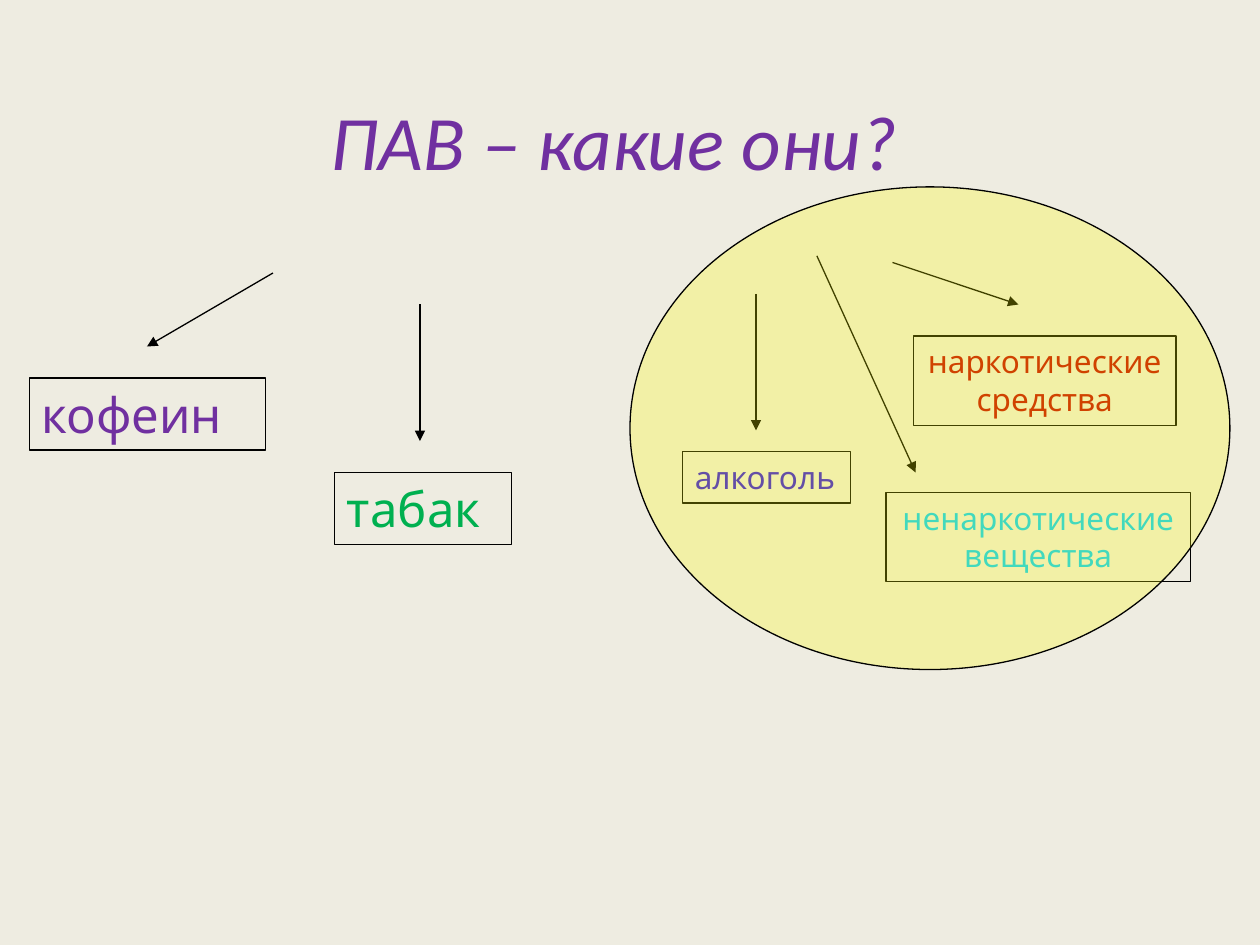
from lxml.etree import SubElement
from pptx import Presentation
from pptx.dml.color import RGBColor
from pptx.enum.shapes import MSO_CONNECTOR, MSO_SHAPE
from pptx.enum.text import MSO_ANCHOR, PP_ALIGN
from pptx.oxml.ns import qn
from pptx.util import Pt

COLORS = {
    "background": "EEECE1", "line": "000000", "group": "FFFF00",
    "purple": "7030A0", "green": "00B050", "blue": "2F11E1",
    "red": "C00000", "cyan": "00CCFF",
}
LEFT, CENTER = PP_ALIGN.LEFT, PP_ALIGN.CENTER

# Content: lengths in points
TITLE = ("ПАВ – какие они?", (162, 30, 378, 99.5))
ARROWS = [  # start x, start y, end x, end y
    (156, 156, 84, 198),
    (240, 174, 240, 252),
    (432, 168, 432, 246),
    (510, 150, 582, 174),
    (466.8, 146.2, 523.2, 270),
]
SUBSTANCES = [  # text, (left, top, width, height), size, color, alignment
    ("кофеин", (16.8, 216, 135, 41.2), 28, "purple", LEFT),
    ("табак", (191.2, 270, 101.2, 41.2), 28, "green", LEFT),
    ("алкоголь", (390, 258, 96, 29.5), 18, "blue", LEFT),
    ("наркотические средства", (522, 192, 150, 51), 18, "red", CENTER),
    ("ненаркотические вещества", (506.2, 281.4, 174.2, 51), 18, "cyan", CENTER),
]
GROUP_OVAL = (360, 106.8, 342.8, 275.8)
GROUP_OPACITY = 26


def color(name):
    return RGBColor.from_string(COLORS[name])


def points(lengths):
    return [Pt(length) for length in lengths]


def set_line(line):
    line.color.rgb = color("line")
    line.width = Pt(0.75)


def write(shape, text, font, size, color_name, alignment, anchor, italic=None):
    frame = shape.text_frame
    frame.word_wrap = True
    frame.vertical_anchor = anchor
    para = frame.paragraphs[0]
    para.alignment = alignment
    span = para.add_run()
    span.text = text
    span.font.name = font
    span.font.size = Pt(size)
    span.font.italic = italic
    span.font.color.rgb = color(color_name)


def add_outline(page, kind, place):
    shape = page.shapes.add_shape(kind, *points(place))
    shape.shadow.inherit = False
    shape.fill.background()
    set_line(shape.line)
    return shape


def add_arrow(page, ends):
    arrow = page.shapes.add_connector(MSO_CONNECTOR.STRAIGHT, *points(ends))
    set_line(arrow.line)
    SubElement(arrow.line._get_or_add_ln(), qn("a:tailEnd"), type="triangle")
    SubElement(arrow._element.spPr, qn("a:effectLst"))


def main():
    deck = Presentation()
    deck.slide_width, deck.slide_height = Pt(720), Pt(540)
    page = deck.slides.add_slide(deck.slide_layouts[6])
    page.background.fill.solid()
    page.background.fill.fore_color.rgb = color("background")

    # Title
    text, place = TITLE
    title = page.shapes.add_textbox(*points(place))
    write(title, text, "Calibri", 44, "purple", CENTER, MSO_ANCHOR.MIDDLE, True)

    # Arrows to the substances
    for ends in ARROWS:
        add_arrow(page, ends)

    # Substance boxes
    for text, place, size, color_name, alignment in SUBSTANCES:
        box = add_outline(page, MSO_SHAPE.RECTANGLE, place)
        write(box, text, "Karla", size, color_name, alignment, MSO_ANCHOR.TOP)

    # Translucent oval over the right-hand group
    oval = add_outline(page, MSO_SHAPE.OVAL, GROUP_OVAL)
    oval.fill.solid()
    oval.fill.fore_color.rgb = color("group")
    tint = oval._element.spPr.find(qn("a:solidFill"))[0]
    SubElement(tint, qn("a:alpha"), val=str(GROUP_OPACITY * 1000))

    deck.save("out.pptx")


if __name__ == "__main__":
    main()
